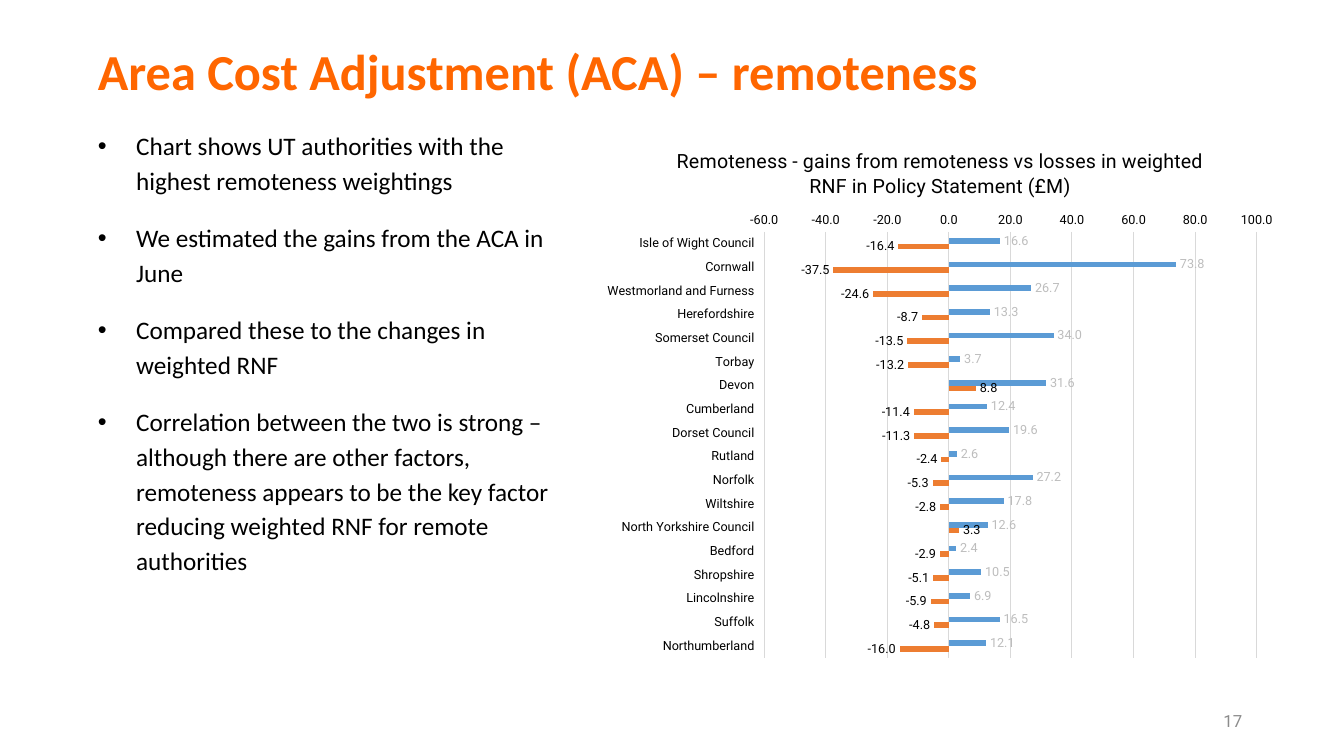
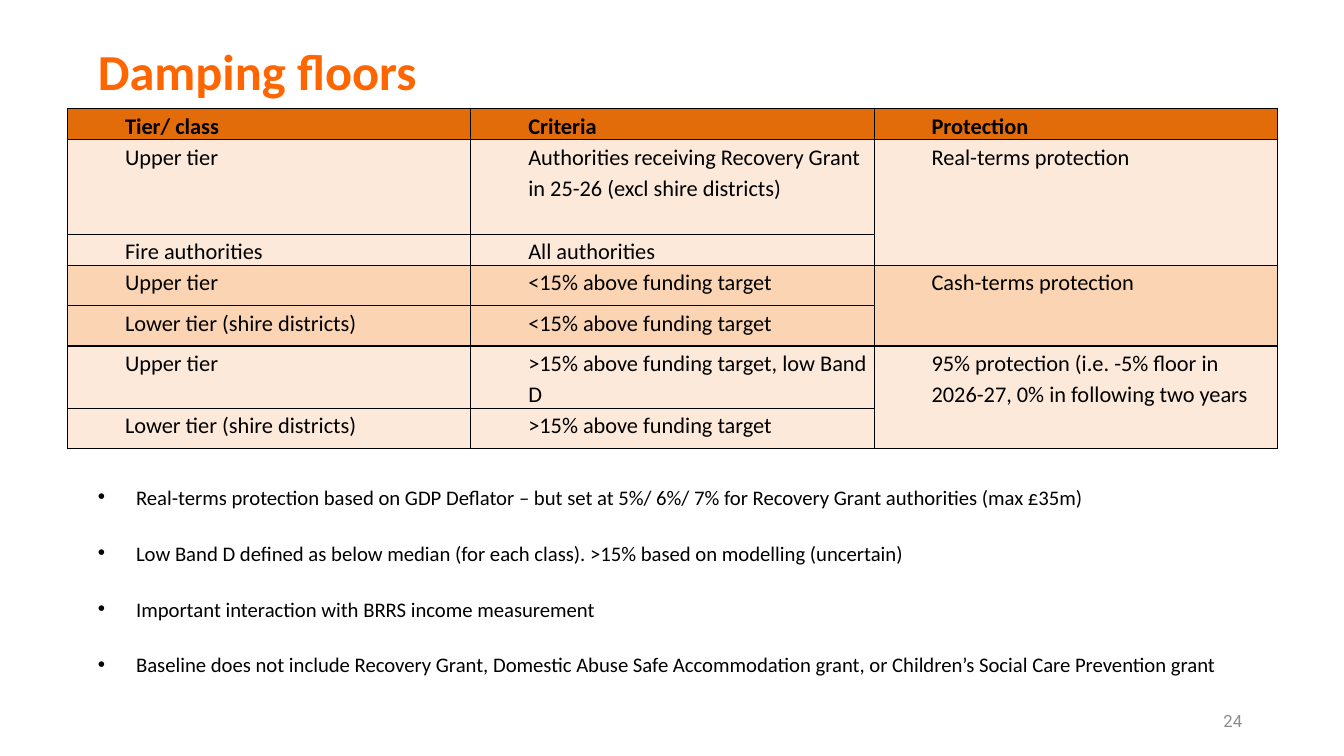
from lxml.etree import SubElement
from pptx import Presentation
from pptx.chart.data import CategoryChartData
from pptx.dml.color import RGBColor
from pptx.enum.chart import XL_CHART_TYPE as ChartType, XL_LABEL_POSITION as LabelPosition
from pptx.enum.chart import XL_TICK_LABEL_POSITION as TickLabels, XL_TICK_MARK as TickMark
from pptx.enum.text import MSO_ANCHOR as Anchor, MSO_AUTO_SIZE as AutoSize, PP_ALIGN as Align
from pptx.oxml import parse_xml
from pptx.oxml.ns import nsdecls, qn
from pptx.util import Inches, Pt

ORANGE = RGBColor(0xFF, 0x66, 0x00)
BLACK = RGBColor(0, 0, 0)
NUMBER_GREY = RGBColor(0x8C, 0x8C, 0x8C)
GRID_GREY = RGBColor(0xD9, 0xD9, 0xD9)
LABEL_GREY = RGBColor(0xBD, 0xBD, 0xBD)
GAIN_BLUE = RGBColor(0x5B, 0x9B, 0xD5)
LOSS_ORANGE = RGBColor(0xED, 0x7D, 0x31)
HEADER_FILL = RGBColor(0xE3, 0x6C, 0x0A)
PALE_FILL = RGBColor(0xFD, 0xE9, 0xD9)
PEACH_FILL = RGBColor(0xFB, 0xD4, 0xB4)
TEXT_FONT, CHART_FONT = "Calibri", "Roboto"
LEFT, CONTENT_WIDTH = 0.92, 11.5

REMOTENESS_POINTS = [
    "Chart shows UT authorities with the highest remoteness weightings",
    "We estimated the gains from the ACA in June",
    "Compared these to the changes in weighted RNF",
    "Correlation between the two is strong – although there are other factors, remoteness "
    "appears to be the key factor reducing weighted RNF for remote authorities",
]
CHART_TITLE = "Remoteness - gains from remoteness vs losses in weighted RNF in Policy Statement (£M)"
AUTHORITIES = [  # name, gain from remoteness, change in weighted RNF
    ("Isle of Wight Council", 16.6, -16.4),
    ("Cornwall", 73.8, -37.5),
    ("Westmorland and Furness", 26.7, -24.6),
    ("Herefordshire", 13.3, -8.7),
    ("Somerset Council", 34, -13.5),
    ("Torbay", 3.7, -13.2),
    ("Devon", 31.6, 8.8),
    ("Cumberland", 12.4, -11.4),
    ("Dorset Council", 19.6, -11.3),
    ("Rutland", 2.6, -2.4),
    ("Norfolk", 27.2, -5.3),
    ("Wiltshire", 17.8, -2.8),
    ("North Yorkshire Council", 12.6, 3.3),
    ("Bedford", 2.4, -2.9),
    ("Shropshire", 10.5, -5.1),
    ("Lincolnshire", 6.9, -5.9),
    ("Suffolk", 16.5, -4.8),
    ("Northumberland", 12.1, -16),
]
PLOT_AREA = {"x": 0.246, "y": 0.192, "w": 0.711, "h": 0.787}  # shares of the chart

FLOOR_HEADINGS = ("Tier/ class", "Criteria", "Protection")
FLOOR_GROUPS = [  # protection, fill, (tier, criteria, row height)
    ("Real-terms protection", PALE_FILL, [
        ("Upper tier", "Authorities receiving Recovery Grant in 25-26 (excl shire districts)", 0.94),
        ("Fire authorities", "All authorities", 0.3)]),
    ("Cash-terms protection", PEACH_FILL, [
        ("Upper tier", "<15% above funding target", 0.4),
        ("Lower tier (shire districts)", "<15% above funding target", 0.4)]),
    ("95% protection (i.e. -5% floor in 2026-27, 0% in following two years", PALE_FILL, [
        ("Upper tier", ">15% above funding target, low Band D", 0.62),
        ("Lower tier (shire districts)", ">15% above funding target", 0.4)]),
]
DAMPING_POINTS = [
    "Real-terms protection based on GDP Deflator – but set at 5%/ 6%/ 7% for Recovery Grant "
    "authorities (max £35m)",
    "Low Band D defined as below median (for each class). >15% based on modelling (uncertain)",
    "Important interaction with BRRS income measurement",
    "Baseline does not include Recovery Grant, Domestic Abuse Safe Accommodation grant, "
    "or Children’s Social Care Prevention grant",
]


def set_font(font, size, color=BLACK, name=TEXT_FONT, bold=False):
    font.name, font.size, font.bold = name, Pt(size), bold
    font.color.rgb = color


def set_insets(target, horizontal, vertical):
    target.margin_left = target.margin_right = Inches(horizontal)
    target.margin_top = target.margin_bottom = Inches(vertical)


def add_text_frame(slide, left, top, width, height):
    box = slide.shapes.add_textbox(Inches(left), Inches(top), Inches(width), Inches(height))
    box.text_frame.word_wrap = True
    return box.text_frame


def add_titled_slide(presentation, title, number):
    slide = presentation.slides.add_slide(presentation.slide_layouts[5])
    shape = slide.shapes.title
    shape.left, shape.top = Inches(LEFT), Inches(0.41)
    shape.width, shape.height = Inches(CONTENT_WIDTH), Inches(0.66)
    frame = shape.text_frame
    frame.text = title
    frame.auto_size = AutoSize.NONE
    frame.vertical_anchor = Anchor.MIDDLE
    set_insets(frame, 0.05, 0.05)
    paragraph = frame.paragraphs[0]
    paragraph.alignment, paragraph.line_spacing = Align.LEFT, 0.9
    set_font(paragraph.font, 36, ORANGE, bold=True)

    frame = add_text_frame(slide, LEFT + CONTENT_WIDTH - 3, 6.95, 3, 0.4)
    frame.vertical_anchor = Anchor.MIDDLE
    paragraph = frame.paragraphs[0]
    paragraph.text, paragraph.alignment = str(number), Align.RIGHT
    set_font(paragraph.font, 12, NUMBER_GREY, CHART_FONT)
    return slide


def add_bullets(slide, points, top, width, height, size, line_spacing):
    frame = add_text_frame(slide, LEFT, top, width, height)
    set_insets(frame, 0.05, 0.05)
    for index, point in enumerate(points):
        paragraph = frame.add_paragraph() if index else frame.paragraphs[0]
        paragraph.text = point
        properties = paragraph._p.get_or_add_pPr()
        properties.set("marL", str(Inches(0.38)))
        properties.set("indent", str(-Inches(0.38)))
        SubElement(properties, qn("a:buFont"), typeface="Arial")
        SubElement(properties, qn("a:buChar"), char="•")
        paragraph.line_spacing = line_spacing
        paragraph.space_before = Pt(10 if index else 0)
        paragraph.space_after = Pt(6)
        set_font(paragraph.font, size)


def add_remoteness_chart(slide):
    names, gains, losses = zip(*AUTHORITIES)
    data = CategoryChartData(number_format="0.0")
    data.categories = names
    data.add_series("Series 1", gains)
    data.add_series("Series 2", losses)
    chart = slide.shapes.add_chart(ChartType.BAR_CLUSTERED, Inches(5.89), Inches(1.27),
                                   Inches(6.87), Inches(5.37), data).chart
    set_font(chart.font, 10, name=CHART_FONT)
    chart.has_legend = False
    chart.has_title = True
    chart.chart_title.include_in_layout = False
    title = chart.chart_title.text_frame
    title.text = CHART_TITLE
    set_font(title.paragraphs[0].font, 14, name=CHART_FONT)

    plot = chart.plots[0]
    plot.gap_width, plot.overlap, plot.vary_by_categories = 219, 0, False
    for series, fill, label_color in zip(plot.series, (GAIN_BLUE, LOSS_ORANGE), (LABEL_GREY, BLACK)):
        series.invert_if_negative = False
        series.format.fill.solid()
        series.format.fill.fore_color.rgb = fill
        labels = series.data_labels
        labels.show_value = True
        labels.number_format, labels.number_format_is_linked = "0.0", False
        labels.position = LabelPosition.OUTSIDE_END
        set_font(labels.font, 9, label_color, CHART_FONT)

    names_axis, value_axis = chart.category_axis, chart.value_axis
    for axis in (names_axis, value_axis):
        axis.major_tick_mark = axis.minor_tick_mark = TickMark.NONE
        set_font(axis.tick_labels.font, 9, name=CHART_FONT)
    names_axis.reverse_order = True
    names_axis.tick_label_position = TickLabels.LOW
    value_axis.minimum_scale, value_axis.maximum_scale, value_axis.major_unit = -60, 100, 20
    value_axis.tick_labels.number_format = "0.0"
    value_axis.tick_labels.number_format_is_linked = False
    value_axis.format.line.fill.background()
    value_axis.has_major_gridlines = True
    for line in (names_axis.format.line, value_axis.major_gridlines.format.line):
        line.color.rgb, line.width = GRID_GREY, Pt(0.75)

    plot_area = chart._chartSpace.chart.plotArea
    for layout in plot_area.findall(qn("c:layout")):
        plot_area.remove(layout)
    sizes = "".join(f'<c:{key} val="{share}"/>' for key, share in PLOT_AREA.items())
    plot_area.insert(0, parse_xml(
        f'<c:layout {nsdecls("c")}><c:manualLayout><c:layoutTarget val="inner"/>'
        f'<c:xMode val="edge"/><c:yMode val="edge"/>{sizes}</c:manualLayout></c:layout>'))


def format_cell(cell, text, fill, bold=False):
    cell.text = text
    set_insets(cell, 0.07, 0)
    paragraph = cell.text_frame.paragraphs[0]
    paragraph._p.get_or_add_pPr().set("marL", str(Inches(0.5)))
    paragraph.line_spacing, paragraph.space_after = 1.15, Pt(6)
    set_font(paragraph.font, 16, bold=bold)
    properties = cell._tc.get_or_add_tcPr()
    for side in "LRTB":
        properties.append(parse_xml(
            f'<a:ln{side} {nsdecls("a")} w="{Pt(1)}"><a:solidFill>'
            f'<a:srgbClr val="{BLACK}"/></a:solidFill></a:ln{side}>'))
    cell.fill.solid()
    cell.fill.fore_color.rgb = fill


def add_floors_table(slide):
    rows = [(FLOOR_HEADINGS, HEADER_FILL, 0.3)]
    for protection, fill, tiers in FLOOR_GROUPS:
        for index, (tier, criteria, height) in enumerate(tiers):
            rows.append(((tier, criteria, "" if index else protection), fill, height))
    total = sum(height for _, _, height in rows)
    table = slide.shapes.add_table(len(rows), len(FLOOR_HEADINGS), Inches(0.67), Inches(1.08),
                                   Inches(12), Inches(total)).table
    table.first_row = table.horz_banding = False
    for row, (texts, fill, height) in enumerate(rows):
        table.rows[row].height = Inches(height)
        for column, text in enumerate(texts):
            format_cell(table.cell(row, column), text, fill, bold=row == 0)
    first = 1
    for _, _, tiers in FLOOR_GROUPS:
        table.cell(first, 2).merge(table.cell(first + len(tiers) - 1, 2))
        first += len(tiers)


def main():
    presentation = Presentation()
    presentation.slide_width, presentation.slide_height = Inches(13.33), Inches(7.5)

    slide = add_titled_slide(presentation, "Area Cost Adjustment (ACA) – remoteness", 17)
    add_bullets(slide, REMOTENESS_POINTS, 1.2, 4.81, 5.55, 18, 1.15)
    add_remoteness_chart(slide)

    slide = add_titled_slide(presentation, "Damping floors", 24)
    add_floors_table(slide)
    add_bullets(slide, DAMPING_POINTS, 4.67, CONTENT_WIDTH, 2.41, 14.8, 1.35)

    presentation.save("out.pptx")


if __name__ == "__main__":
    main()
